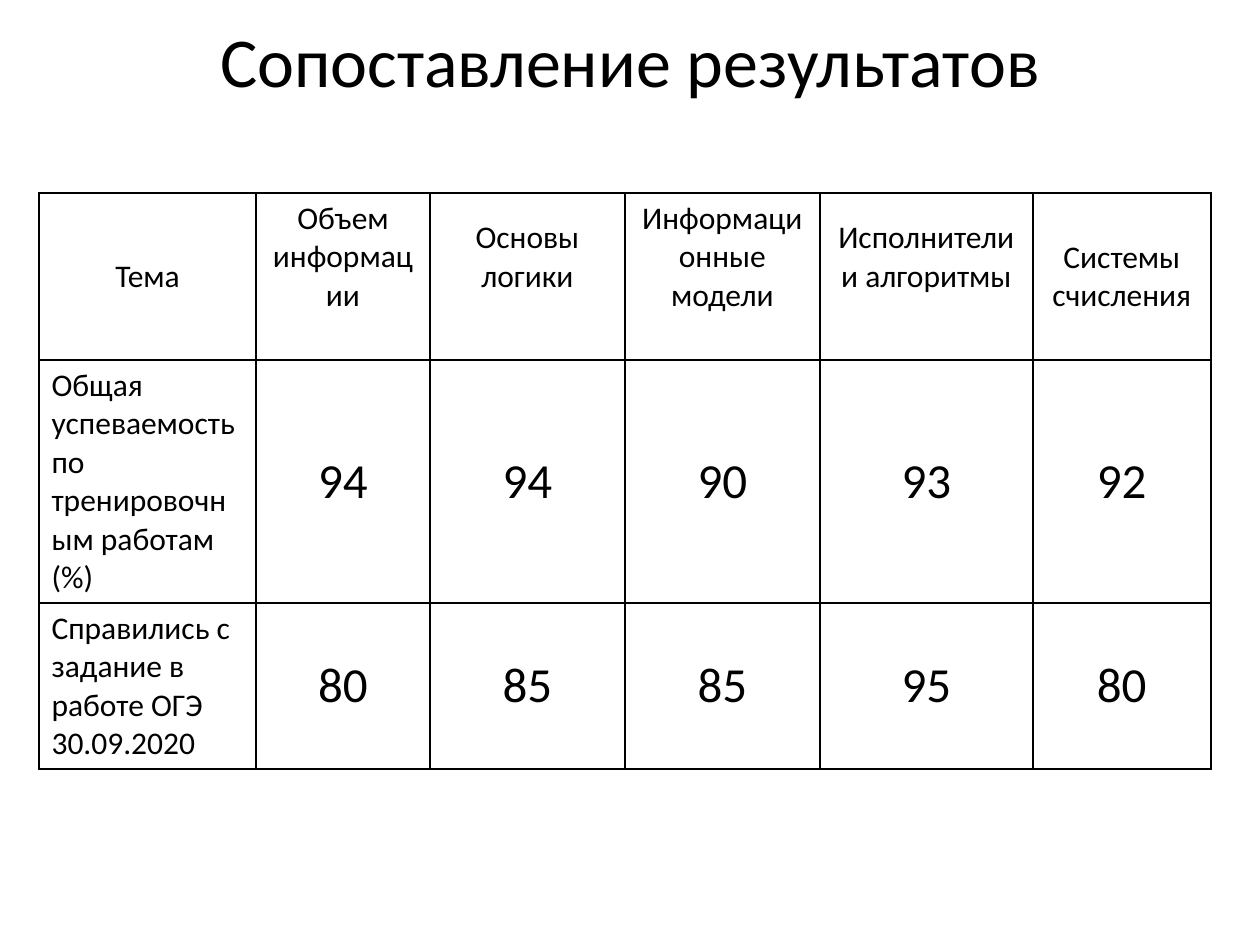
import dataclasses

import lxml.etree
import pptx
import pptx.dml.color
import pptx.enum.text
import pptx.oxml.ns
import pptx.presentation
import pptx.slide
import pptx.table
import pptx.text.text
import pptx.util

EMU_PER_PX = 914400 / 126
ALIGN = pptx.enum.text.PP_ALIGN
ANCHOR = pptx.enum.text.MSO_ANCHOR


@dataclasses.dataclass(frozen=True)
class Theme:
    font: str = "Calibri"
    ink: str = "000000"
    title: int = 40
    label: int = 18
    value: int = 28
    border: int = 1


@dataclasses.dataclass(frozen=True)
class Topic:
    name: str
    width: int
    training: int
    exam: int
    bottom: int = 6


THEME = Theme()
RAISED = 45
TOPICS = [
    Topic("Объем информации", 174, 94, 80, RAISED),
    Topic("Основы логики", 195, 94, 85, RAISED),
    Topic("Информационные модели", 195, 90, 85, RAISED),
    Topic("Исполнители и алгоритмы", 213, 93, 95, RAISED),
    Topic("Системы счисления", 178, 92, 80),
]
LABEL_WIDTH = 217
ROW_HEIGHTS = [167, 243, 166]


def px(n: int) -> pptx.util.Emu:
    return pptx.util.Emu(round(n * EMU_PER_PX))


def style_text(tf: pptx.text.text.TextFrame, text: str, size: int, align: ALIGN) -> None:
    tf.text = text
    p = tf.paragraphs[0]
    p.alignment = align
    font = p.runs[0].font
    font.name = THEME.font
    font.size = pptx.util.Pt(size)
    font.color.rgb = pptx.dml.color.RGBColor.from_string(THEME.ink)


def add_borders(cell: pptx.table._Cell) -> None:
    qn = pptx.oxml.ns.qn
    tc_pr = cell._tc.get_or_add_tcPr()
    for i, side in enumerate(("lnL", "lnR", "lnT", "lnB")):
        ln = lxml.etree.Element(qn(f"a:{side}"), w=str(pptx.util.Pt(THEME.border)))
        fill = lxml.etree.SubElement(ln, qn("a:solidFill"))
        lxml.etree.SubElement(fill, qn("a:srgbClr"), val=THEME.ink)
        tc_pr.insert(i, ln)


def fill_cell(cell: pptx.table._Cell, text: str, size: int = THEME.label,
              align: ALIGN = ALIGN.CENTER, anchor: ANCHOR = ANCHOR.MIDDLE,
              bottom: int = 6) -> None:
    style_text(cell.text_frame, text, size, align)
    cell.vertical_anchor = anchor
    cell.margin_bottom = px(bottom)
    cell.fill.background()
    add_borders(cell)


def add_title(s: pptx.slide.Slide, text: str) -> None:
    sp = s.shapes.title
    sp.left, sp.top, sp.width, sp.height = px(63), px(0), px(1134), px(118)
    style_text(sp.text_frame, text, THEME.title, ALIGN.CENTER)
    sp.text_frame.vertical_anchor = ANCHOR.MIDDLE


def add_results(s: pptx.slide.Slide) -> None:
    widths = [LABEL_WIDTH] + [topic.width for topic in TOPICS]
    frame = s.shapes.add_table(len(ROW_HEIGHTS), len(widths), px(39), px(193),
                               px(sum(widths)), px(sum(ROW_HEIGHTS)))
    table = frame.table
    table.first_row = False
    table.horz_banding = False
    for column, width in zip(table.columns, widths):
        column.width = px(width)
    for row, height in zip(table.rows, ROW_HEIGHTS):
        row.height = px(height)

    fill_cell(table.cell(0, 0), "Тема")
    labels = ("Общая успеваемость по тренировочным работам (%)",
              "Справились с задание в работе ОГЭ 30.09.2020")
    for i, label in enumerate(labels, 1):
        fill_cell(table.cell(i, 0), label, align=ALIGN.LEFT, anchor=ANCHOR.TOP)
    for j, topic in enumerate(TOPICS, 1):
        fill_cell(table.cell(0, j), topic.name, bottom=topic.bottom)
        for i, value in enumerate((topic.training, topic.exam), 1):
            fill_cell(table.cell(i, j), str(value), THEME.value)


def main() -> None:
    prs = pptx.Presentation()
    prs.slide_width, prs.slide_height = px(1260), px(945)
    s = prs.slides.add_slide(prs.slide_layouts[5])
    add_title(s, "Сопоставление результатов")
    add_results(s)
    prs.save("out.pptx")


if __name__ == "__main__":
    main()
